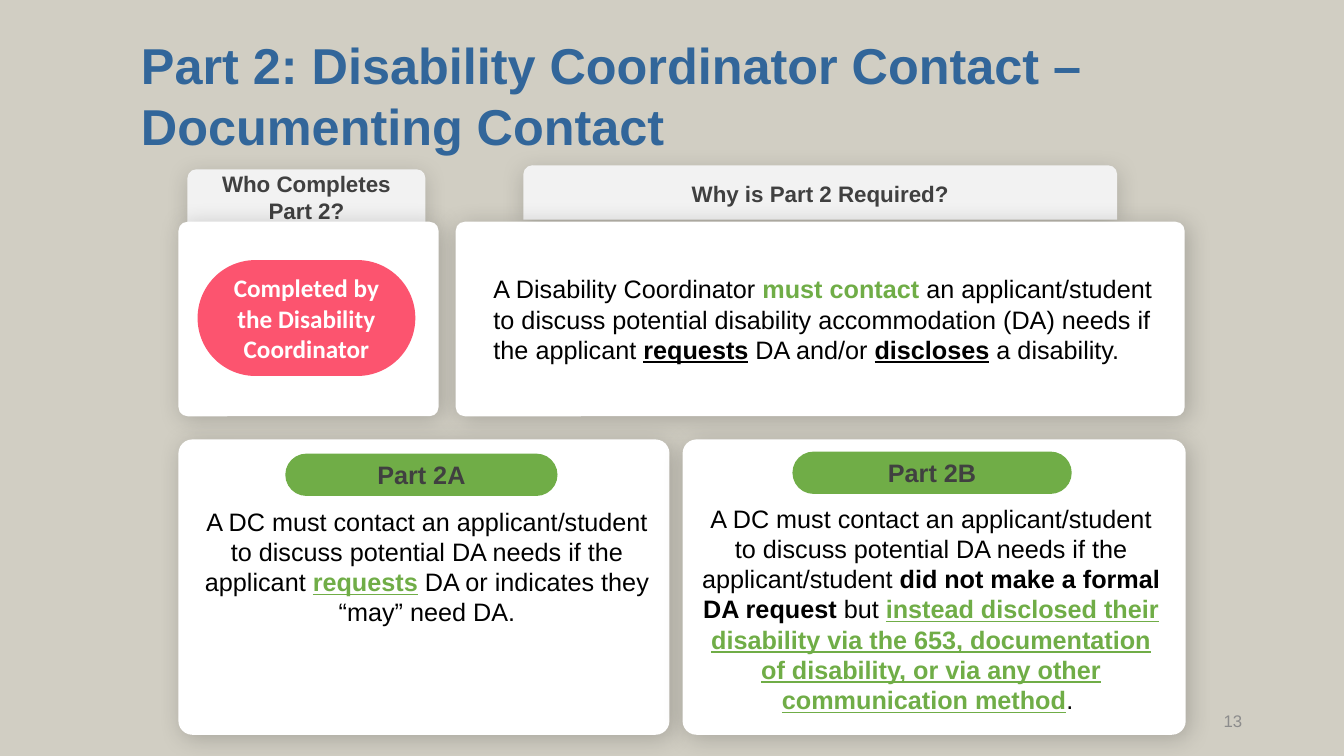
from dataclasses import dataclass

from lxml import etree
from pptx import Presentation
from pptx import util as u
from pptx.dml.color import RGBColor
from pptx.enum import shapes, text
from pptx.oxml import ns

BACKGROUND = RGBColor(0xD1, 0xCE, 0xC3)
WHITE = RGBColor(0xFF, 0xFF, 0xFF)
BLACK = RGBColor(0x00, 0x00, 0x00)
LIGHT_GRAY = RGBColor(0xF2, 0xF2, 0xF2)
DARK_GRAY = RGBColor(0x40, 0x40, 0x40)
PAGE_GRAY = RGBColor(0x8C, 0x8C, 0x8C)
BLUE = RGBColor(0x32, 0x66, 0x9A)
GREEN = RGBColor(0x70, 0xAD, 0x47)
PINK = RGBColor(0xFC, 0x54, 0x6F)

ROUND = shapes.MSO_SHAPE.ROUNDED_RECTANGLE
TAB = shapes.MSO_SHAPE.ROUND_2_SAME_RECTANGLE
LEFT, CENTER, RIGHT = text.PP_ALIGN.LEFT, text.PP_ALIGN.CENTER, text.PP_ALIGN.RIGHT
TOP, MIDDLE = text.MSO_ANCHOR.TOP, text.MSO_ANCHOR.MIDDLE


@dataclass
class Box:
    left: float
    top: float
    width: float
    height: float

    def lengths(self) -> list[u.Length]:
        return [u.Inches(v) for v in (self.left, self.top, self.width, self.height)]


@dataclass
class Run:
    text: str
    color: RGBColor = BLACK
    bold: bool = False
    underline: bool = False


@dataclass
class Shadow:
    opacity: int
    blur: float
    distance: float
    angle: int


@dataclass
class Part:
    card: Box
    label: str
    pill: Box
    body: Box
    runs: list[Run]


TAB_SHADOW = Shadow(17, 16, 3, 90)
CARD_SHADOW = Shadow(20, 17, 3, 45)

TABS = [
    ("Who Completes Part 2?", Box(1.86, 1.68, 2.36, 0.52)),
    ("Why is Part 2 Required?", Box(5.19, 1.64, 5.89, 0.54)),
]
WHO_CARD = Box(1.77, 2.2, 2.58, 1.93)
WHY_CARD = Box(4.52, 2.2, 7.23, 1.93)
WHY_RUNS = [
    Run("A Disability Coordinator "),
    Run("must contact ", GREEN, bold=True),
    Run("an applicant/student to discuss potential disability accommodation (DA) "
        "needs if the applicant "),
    Run("requests", bold=True, underline=True),
    Run(" DA and/or "),
    Run("discloses", bold=True, underline=True),
    Run(" a disability."),
]
CONTACT = "A DC must contact an applicant/student to discuss potential DA needs if the "
PARTS = [
    Part(Box(1.77, 4.36, 4.87, 2.93), "Part 2A", Box(2.83, 4.5, 2.7, 0.42),
         Box(1.77, 4.97, 4.87, 1.31), [
             Run(CONTACT + "applicant "),
             Run("requests", GREEN, bold=True, underline=True),
             Run(" DA or indicates they “may” need DA."),
         ]),
    Part(Box(6.77, 4.36, 4.99, 2.93), "Part 2B", Box(7.86, 4.48, 2.77, 0.42),
         Box(6.77, 4.94, 4.87, 1.92), [
             Run(CONTACT + "applicant/student "),
             Run("did not make a formal DA request ", bold=True),
             Run("but "),
             Run("instead disclosed their disability via the 653, documentation of "
                 "disability, or via any other communication method",
                 GREEN, bold=True, underline=True),
             Run(". "),
         ]),
]


def write(sp, runs: list[Run], *, size: float = 18, font: str = "Arial",
          align=CENTER, anchor=MIDDLE, indent: float = 0) -> None:
    tf = sp.text_frame
    tf.word_wrap = True
    tf.vertical_anchor = anchor
    p = tf.paragraphs[0]
    p.alignment = align
    if indent:
        p._p.get_or_add_pPr().set("marL", str(u.Inches(indent)))
    for run in runs:
        r = p.add_run()
        r.text = run.text
        r.font.name = font
        r.font.size = u.Pt(size)
        r.font.bold = run.bold
        r.font.underline = run.underline
        r.font.color.rgb = run.color


def add_shadow(sp, shadow: Shadow) -> None:
    effects = sp._element.spPr.find(ns.qn("a:effectLst"))
    outer = etree.SubElement(
        effects, ns.qn("a:outerShdw"), blurRad=str(u.Pt(shadow.blur)),
        dist=str(u.Pt(shadow.distance)), dir=str(shadow.angle * 60000),
        algn="ctr", rotWithShape="0")
    color = etree.SubElement(outer, ns.qn("a:srgbClr"), val=str(BLACK))
    etree.SubElement(color, ns.qn("a:alpha"), val=str(shadow.opacity * 1000))


def add_panel(s, kind, box: Box, fill: RGBColor, *, corner: float | None = None,
              shadow: Shadow | None = None):
    sp = s.shapes.add_shape(kind, *box.lengths())
    if corner is not None:
        sp.adjustments[0] = corner
    sp.fill.solid()
    sp.fill.fore_color.rgb = fill
    sp.line.fill.background()
    sp.shadow.inherit = False
    if shadow:
        add_shadow(sp, shadow)
    return sp


def add_card(s, box: Box):
    return add_panel(s, ROUND, box, WHITE, corner=0.047, shadow=CARD_SHADOW)


def add_pill(s, box: Box, fill: RGBColor):
    return add_panel(s, ROUND, box, fill, corner=0.5)


def add_text(s, box: Box, runs: list[Run], **fmt) -> None:
    write(s.shapes.add_textbox(*box.lengths()), runs, **fmt)


def main() -> None:
    prs = Presentation()
    prs.slide_width, prs.slide_height = u.Inches(13.33), u.Inches(7.5)
    s = prs.slides.add_slide(prs.slide_layouts[6])
    s.background.fill.solid()
    s.background.fill.fore_color.rgb = BACKGROUND

    # Title
    add_text(s, Box(1.3, 0.29, 10.15, 1.31),
             [Run("Part 2: Disability Coordinator Contact – Documenting Contact",
                  BLUE, bold=True)], size=36, align=LEFT, anchor=TOP)

    # Question tabs, tucked behind the upper cards
    for label, box in TABS:
        write(add_panel(s, TAB, box, LIGHT_GRAY, shadow=TAB_SHADOW),
              [Run(label, DARK_GRAY, bold=True)], size=16)

    # Upper cards: who and why
    add_card(s, WHO_CARD)
    write(add_pill(s, Box(1.96, 2.58, 2.16, 1.15), PINK),
          [Run("Completed by the Disability Coordinator", WHITE, bold=True)],
          font="Calibri")
    write(add_card(s, WHY_CARD), WHY_RUNS, align=LEFT, indent=0.25)

    # Lower cards: parts 2A and 2B
    for part in PARTS:
        add_card(s, part.card)
        write(add_pill(s, part.pill, GREEN), [Run(part.label, DARK_GRAY, bold=True)])
        add_text(s, part.body, part.runs, anchor=TOP, indent=0.06)

    # Slide number
    add_text(s, Box(9.42, 6.95, 3, 0.4), [Run("13", PAGE_GRAY)], size=12, align=RIGHT)

    prs.save("out.pptx")


if __name__ == "__main__":
    main()
